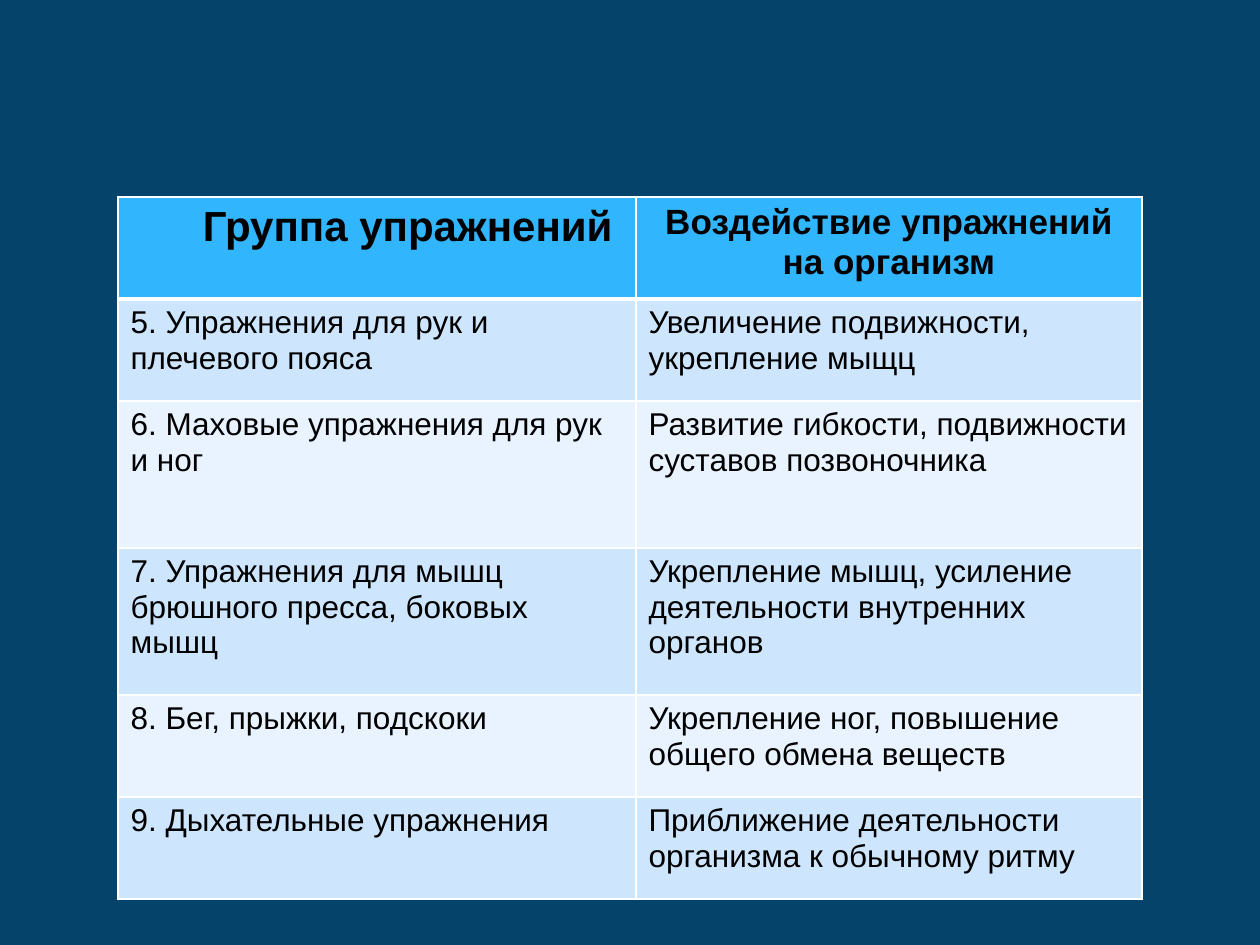
from lxml import etree
from pptx import Presentation
from pptx.dml.color import RGBColor
from pptx.enum.text import PP_ALIGN
from pptx.oxml.ns import qn
from pptx.util import Emu, Pt

CENTER, LEFT = PP_ALIGN.CENTER, PP_ALIGN.LEFT
PX = 914400 // 126

NAVY = RGBColor(0x06, 0x43, 0x6B)
HEADER_BLUE = RGBColor(0x31, 0xB6, 0xFD)
BAND_DARK = RGBColor(0xCE, 0xE5, 0xFE)
BAND_LIGHT = RGBColor(0xE8, 0xF3, 0xFF)
BLACK = RGBColor(0, 0, 0)
WHITE = RGBColor(0xFF, 0xFF, 0xFF)

ROWS = [
    ("Группа упражнений", "Воздействие упражнений на организм"),
    ("5. Упражнения для рук и плечевого пояса",
     "Увеличение подвижности, укрепление мыщц"),
    ("6. Маховые упражнения для рук и ног",
     "Развитие гибкости, подвижности суставов позвоночника"),
    ("7. Упражнения для мышц брюшного пресса, боковых мышц",
     "Укрепление мышц, усиление деятельности внутренних органов"),
    ("8. Бег, прыжки, подскоки",
     "Укрепление ног, повышение общего обмена веществ"),
    ("9. Дыхательные упражнения",
     "Приближение деятельности организма к обычному ритму"),
]
TABLE_LEFT, TABLE_TOP = 118, 197
COLUMN_WIDTHS = [518, 506]
ROW_HEIGHTS = [102, 102, 147, 147, 102, 102]
HEADER_SIZES = [24, 20]
BODY_SIZE = 18
FIRST_HEADER_MARGIN = 74


def px(length):
    return Emu(length * PX)


def set_borders(cell, top, bottom):
    """Draw white borders, 1 pt at the sides, top and bottom as given in points."""
    properties = cell._tc.get_or_add_tcPr()
    widths = {"a:lnL": 1, "a:lnR": 1, "a:lnT": top, "a:lnB": bottom}
    for position, (tag, width) in enumerate(widths.items()):
        line = etree.Element(qn(tag), w=str(Pt(width)))
        fill = etree.SubElement(line, qn("a:solidFill"))
        etree.SubElement(fill, qn("a:srgbClr"), val=str(WHITE))
        properties.insert(position, line)


def fill_cell(cell, text, color, size, bold, alignment):
    cell.fill.solid()
    cell.fill.fore_color.rgb = color
    cell.text_frame.text = text
    paragraph = cell.text_frame.paragraphs[0]
    paragraph.alignment = alignment
    font = paragraph.runs[0].font
    font.name, font.size, font.bold = "Arial", Pt(size), bold
    font.color.rgb = BLACK


presentation = Presentation()
presentation.slide_width, presentation.slide_height = px(1260), px(945)
slide = presentation.slides.add_slide(presentation.slide_layouts[6])
slide.background.fill.solid()
slide.background.fill.fore_color.rgb = NAVY

table = slide.shapes.add_table(
    len(ROWS), len(COLUMN_WIDTHS), px(TABLE_LEFT), px(TABLE_TOP),
    px(sum(COLUMN_WIDTHS)), px(sum(ROW_HEIGHTS))).table
for column, width in zip(table.columns, COLUMN_WIDTHS):
    column.width = px(width)
for row, height in zip(table.rows, ROW_HEIGHTS):
    row.height = px(height)

for row_index, texts in enumerate(ROWS):
    for column_index, text in enumerate(texts):
        cell = table.cell(row_index, column_index)
        if row_index == 0:
            fill_cell(cell, text, HEADER_BLUE, HEADER_SIZES[column_index], True, CENTER)
        else:
            band = BAND_DARK if row_index % 2 else BAND_LIGHT
            fill_cell(cell, text, band, BODY_SIZE, False, LEFT)
        set_borders(cell, top=3 if row_index == 1 else 1,
                    bottom=3 if row_index == 0 else 1)
table.cell(0, 0).margin_left = px(FIRST_HEADER_MARGIN)

presentation.save("out.pptx")
